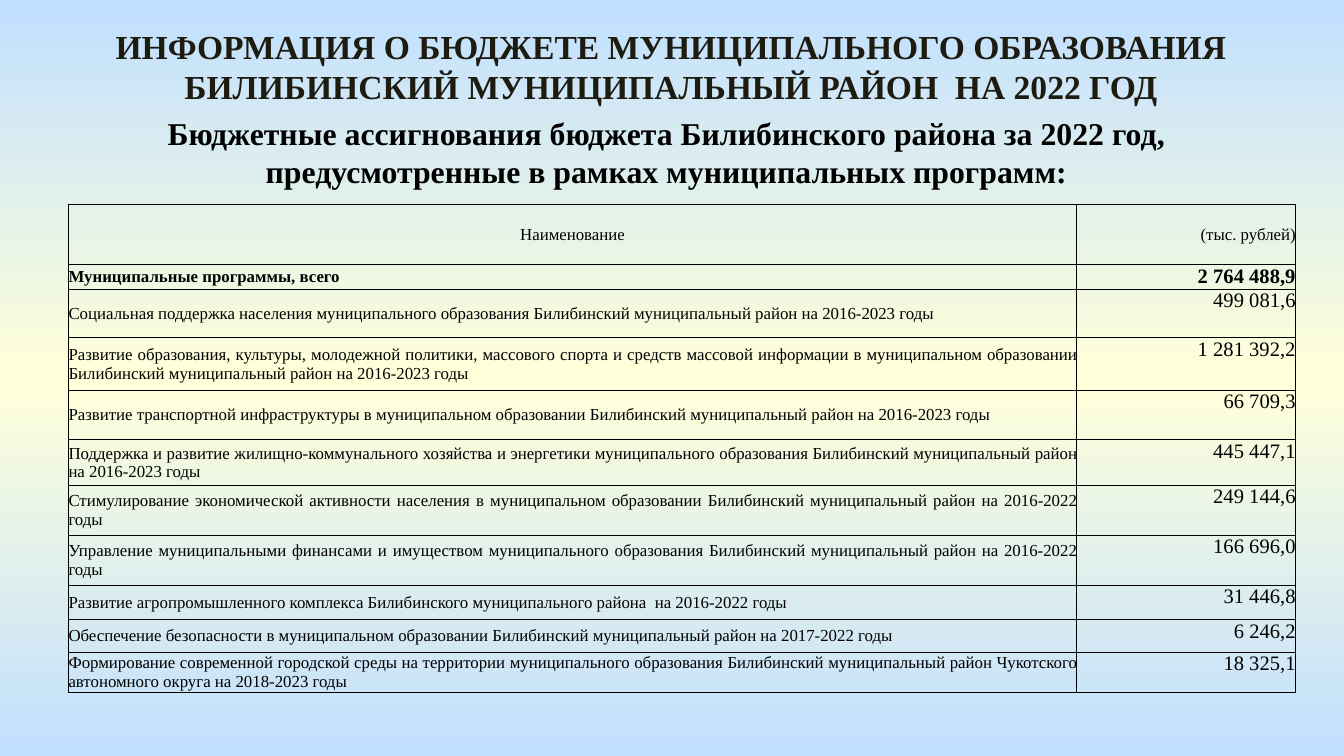
from copy import deepcopy

from pptx import Presentation
from pptx.dml.color import RGBColor
from pptx.enum.text import MSO_ANCHOR, PP_ALIGN
from pptx.oxml import parse_xml
from pptx.oxml.ns import nsdecls, qn
from pptx.util import Inches, Pt

FONT = "Times New Roman"
BLACK = RGBColor(0x00, 0x00, 0x00)
DARK = RGBColor(0x1E, 0x1C, 0x11)
SKY = RGBColor(0xC1, 0xE0, 0xFF)
CREAM = RGBColor(0xFF, 0xFF, 0xD9)

HEADINGS = [
    ("ИНФОРМАЦИЯ О БЮДЖЕТЕ МУНИЦИПАЛЬНОГО ОБРАЗОВАНИЯ БИЛИБИНСКИЙ МУНИЦИПАЛЬНЫЙ РАЙОН  НА 2022 ГОД",
     (0.35, 0.14, 9.29, 0.71), 18, DARK),
    ("Бюджетные ассигнования бюджета Билибинского района за 2022 год, предусмотренные в рамках муниципальных программ:",
     (0.31, 0.8, 9.3, 0.67), 17, BLACK),
]

HEADER = ("Наименование", "(тыс. рублей)", 0.45)
TOTAL = ("Муниципальные программы, всего", "2 764 488,9", 0.18)
PROGRAMS = [
    ("Социальная поддержка населения муниципального образования Билибинский муниципальный район на 2016-2023 годы",
     "499 081,6", 0.36),
    ("Развитие образования, культуры, молодежной политики, массового спорта и средств массовой информации в муниципальном образовании Билибинский муниципальный район на 2016-2023 годы",
     "1 281 392,2", 0.39),
    ("Развитие транспортной инфраструктуры в муниципальном образовании Билибинский муниципальный район на 2016-2023 годы",
     "66 709,3", 0.37),
    ("Поддержка и развитие жилищно-коммунального хозяйства и энергетики муниципального образования Билибинский муниципальный район на 2016-2023 годы",
     "445 447,1", 0.34),
    ("Стимулирование экономической активности населения в муниципальном образовании Билибинский муниципальный район на 2016-2022 годы",
     "249 144,6", 0.37),
    ("Управление муниципальными финансами и имуществом муниципального образования Билибинский муниципальный район на 2016-2022 годы",
     "166 696,0", 0.37),
    ("Развитие агропромышленного комплекса Билибинского муниципального района  на 2016-2022 годы",
     "31 446,8", 0.26),
    ("Обеспечение безопасности в муниципальном образовании Билибинский муниципальный район на 2017-2022 годы",
     "6 246,2", 0.24),
    ("Формирование современной городской среды на территории муниципального образования Билибинский муниципальный район Чукотского автономного округа на 2018-2023 годы",
     "18 325,1", 0.24),
]
ROWS = [HEADER, TOTAL, *PROGRAMS]
COLUMN_WIDTHS = (7.5, 1.63)
TABLE_LEFT, TABLE_TOP = 0.51, 1.52


def write(text_frame, text, size, color, alignment, bold):
    paragraph = text_frame.paragraphs[0]
    paragraph.alignment = alignment
    run = paragraph.add_run()
    run.text = text
    run.font.name = FONT
    run.font.size = Pt(size)
    run.font.bold = bold
    run.font.color.rgb = color


def paint_background(slide):
    fill = slide.background.fill
    fill.gradient()
    fill.gradient_angle = 90
    stop_list = next(slide.element.iter(qn("a:gsLst")))
    stop_list.insert(1, deepcopy(stop_list[0]))
    for stop, position, color in zip(fill.gradient_stops, (0, 0.5, 1), (SKY, CREAM, SKY)):
        stop.position = position
        stop.color.rgb = color


def add_heading(slide, text, box, size, color):
    text_frame = slide.shapes.add_textbox(*map(Inches, box)).text_frame
    text_frame.word_wrap = True
    write(text_frame, text, size, color, PP_ALIGN.CENTER, True)


def format_cell(cell, anchor):
    cell.margin_left = cell.margin_right = cell.margin_top = cell.margin_bottom = 0
    cell.vertical_anchor = anchor
    cell.fill.background()
    properties = cell._tc.get_or_add_tcPr()
    for index, side in enumerate("LRTB"):
        properties.insert(index, parse_xml(
            f'<a:ln{side} {nsdecls("a")} w="{Pt(0.5)}"><a:solidFill>'
            f'<a:srgbClr val="{BLACK}"/></a:solidFill></a:ln{side}>'))


def add_budget_table(slide):
    height = sum(row[2] for row in ROWS)
    table = slide.shapes.add_table(
        len(ROWS), len(COLUMN_WIDTHS), Inches(TABLE_LEFT), Inches(TABLE_TOP),
        Inches(sum(COLUMN_WIDTHS)), Inches(height)).table
    table.first_row = table.horz_banding = False
    for column, width in zip(table.columns, COLUMN_WIDTHS):
        column.width = Inches(width)
    name_alignments = {HEADER: PP_ALIGN.CENTER, TOTAL: PP_ALIGN.LEFT}
    for table_row, row in zip(table.rows, ROWS):
        name, amount, row_height = row
        table_row.height = Inches(row_height)
        name_cell, amount_cell = table_row.cells
        is_header, is_total = row is HEADER, row is TOTAL
        format_cell(name_cell, MSO_ANCHOR.MIDDLE)
        format_cell(amount_cell, MSO_ANCHOR.MIDDLE if is_header else MSO_ANCHOR.TOP)
        write(name_cell.text_frame, name, 9, BLACK,
              name_alignments.get(row, PP_ALIGN.JUSTIFY), is_total)
        write(amount_cell.text_frame, amount, 9 if is_header else 11, BLACK,
              PP_ALIGN.RIGHT, is_total)


def main():
    presentation = Presentation()
    presentation.slide_width = Inches(10)
    presentation.slide_height = presentation.slide_width * 9 // 16
    slide = presentation.slides.add_slide(presentation.slide_layouts[6])
    paint_background(slide)
    for heading in HEADINGS:
        add_heading(slide, *heading)
    add_budget_table(slide)
    presentation.save("out.pptx")


if __name__ == "__main__":
    main()
